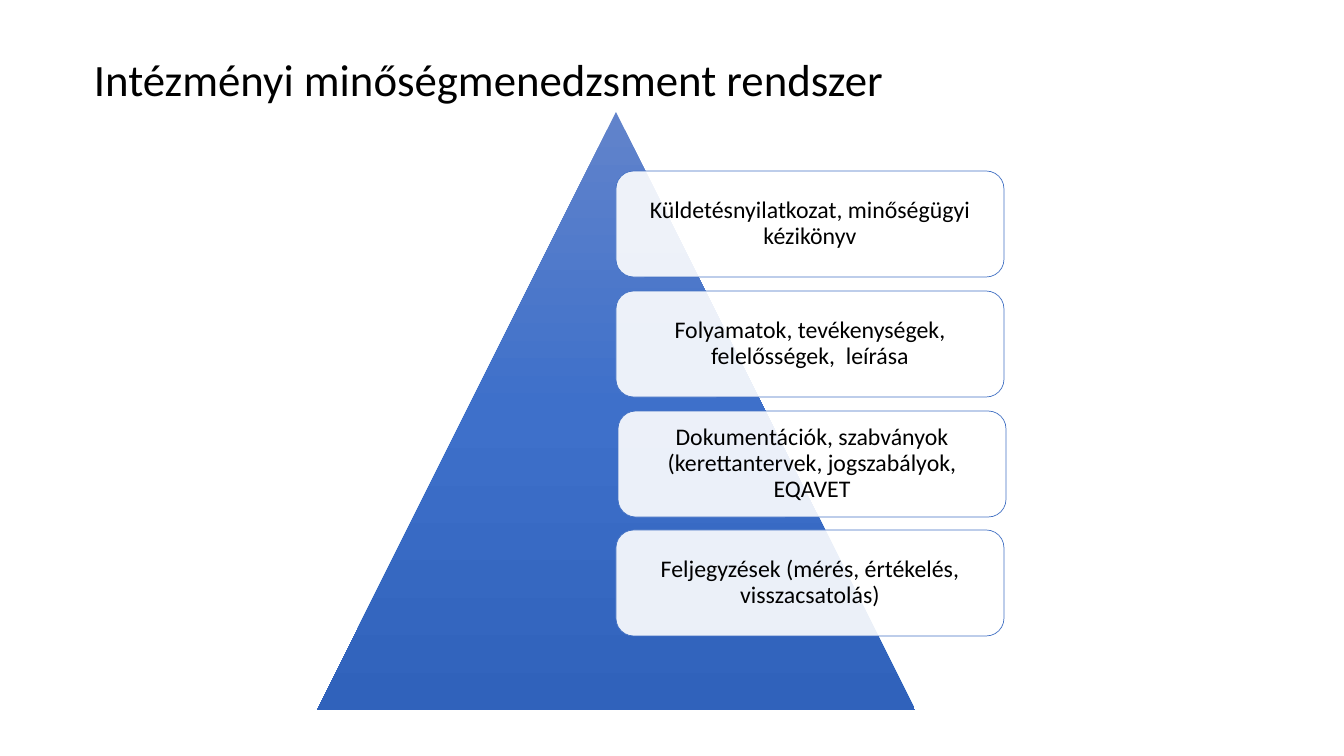
from copy import deepcopy

from pptx import Presentation
from pptx.dml.color import RGBColor
from pptx.enum.shapes import MSO_SHAPE
from pptx.enum.text import MSO_ANCHOR, PP_ALIGN
from pptx.oxml.ns import qn
from pptx.oxml import parse_xml
from pptx.util import Pt

TRIANGLE = MSO_SHAPE.ISOSCELES_TRIANGLE
ROUNDED = MSO_SHAPE.ROUNDED_RECTANGLE
LEFT, CENTER = PP_ALIGN.LEFT, PP_ALIGN.CENTER
TOP, MIDDLE = MSO_ANCHOR.TOP, MSO_ANCHOR.MIDDLE

TITLE = "Intézményi minőségmenedzsment rendszer"
LEVELS = [
    ("Küldetésnyilatkozat, minőségügyi kézikönyv", 616, 171),
    ("Folyamatok, tevékenységek, felelősségek,  leírása", 616, 291),
    ("Dokumentációk, szabványok (kerettantervek, jogszabályok, EQAVET", 618, 411),
    ("Feljegyzések (mérés, értékelés, visszacsatolás)", 616, 530),
]
COLORS = {"text": "000000", "card": "FFFFFF", "outline": "4472C4"}
PYRAMID_STOPS = [(0, "6183CB"), (0.5, "3E70CA"), (1, "3062BB")]
FONT = "Calibri"

SLIDE_SIZE = (1344, 756)
TITLE_BOX = (84, 47, 817, 65)
PYRAMID_BOX = (317, 112, 598, 598)
CARD_SIZE = (388, 106)
CARD_INSET = 12
CARD_ALPHA = 90000
EMU_PER_PX = 914400 / 100.8


def px(*lengths):
    return [round(length * EMU_PER_PX) for length in lengths]


def write_text(shape, text, *, size, align=LEFT, anchor=TOP, wrap=True, inset=None, spacing=None):
    frame = shape.text_frame
    frame.word_wrap = wrap
    frame.vertical_anchor = anchor
    if inset is not None:
        margin = px(inset)[0]
        frame.margin_left = frame.margin_right = margin
        frame.margin_top = frame.margin_bottom = margin
    para = frame.paragraphs[0]
    para.alignment = align
    para.line_spacing = spacing
    span = para.add_run()
    span.text = text
    span.font.name = FONT
    span.font.size = Pt(size)
    span.font.color.rgb = RGBColor.from_string(COLORS["text"])


def add_pyramid(page):
    pyramid = page.shapes.add_shape(TRIANGLE, *px(*PYRAMID_BOX))
    pyramid.shadow.inherit = False
    pyramid.line.fill.background()
    pyramid.fill.gradient()
    pyramid.fill.gradient_angle = 270
    first = next(pyramid._element.spPr.iter(qn("a:gs")))
    first.addnext(deepcopy(first))
    for stop, (position, color) in zip(pyramid.fill.gradient_stops, PYRAMID_STOPS):
        stop.position = position
        stop.color.rgb = RGBColor.from_string(color)


def add_card(page, text, left, top):
    card = page.shapes.add_shape(ROUNDED, *px(left, top, *CARD_SIZE))
    card.shadow.inherit = False
    card.fill.solid()
    card.fill.fore_color.rgb = RGBColor.from_string(COLORS["card"])
    color = next(card._element.spPr.iter(qn("a:srgbClr")))
    color.append(parse_xml(
        '<a:alpha xmlns:a="http://schemas.openxmlformats.org/drawingml/2006/main" '
        f'val="{CARD_ALPHA}"/>'
    ))
    card.line.color.rgb = RGBColor.from_string(COLORS["outline"])
    card.line.width = Pt(0.5)
    write_text(card, text, size=17, align=CENTER, anchor=MIDDLE, inset=CARD_INSET, spacing=0.9)


def main():
    deck = Presentation()
    deck.slide_width, deck.slide_height = px(*SLIDE_SIZE)
    page = deck.slides.add_slide(deck.slide_layouts[6])
    title = page.shapes.add_textbox(*px(*TITLE_BOX))
    write_text(title, TITLE, size=32, wrap=False)
    add_pyramid(page)
    for text, left, top in LEVELS:
        add_card(page, text, left, top)
    deck.save("out.pptx")


if __name__ == "__main__":
    main()
